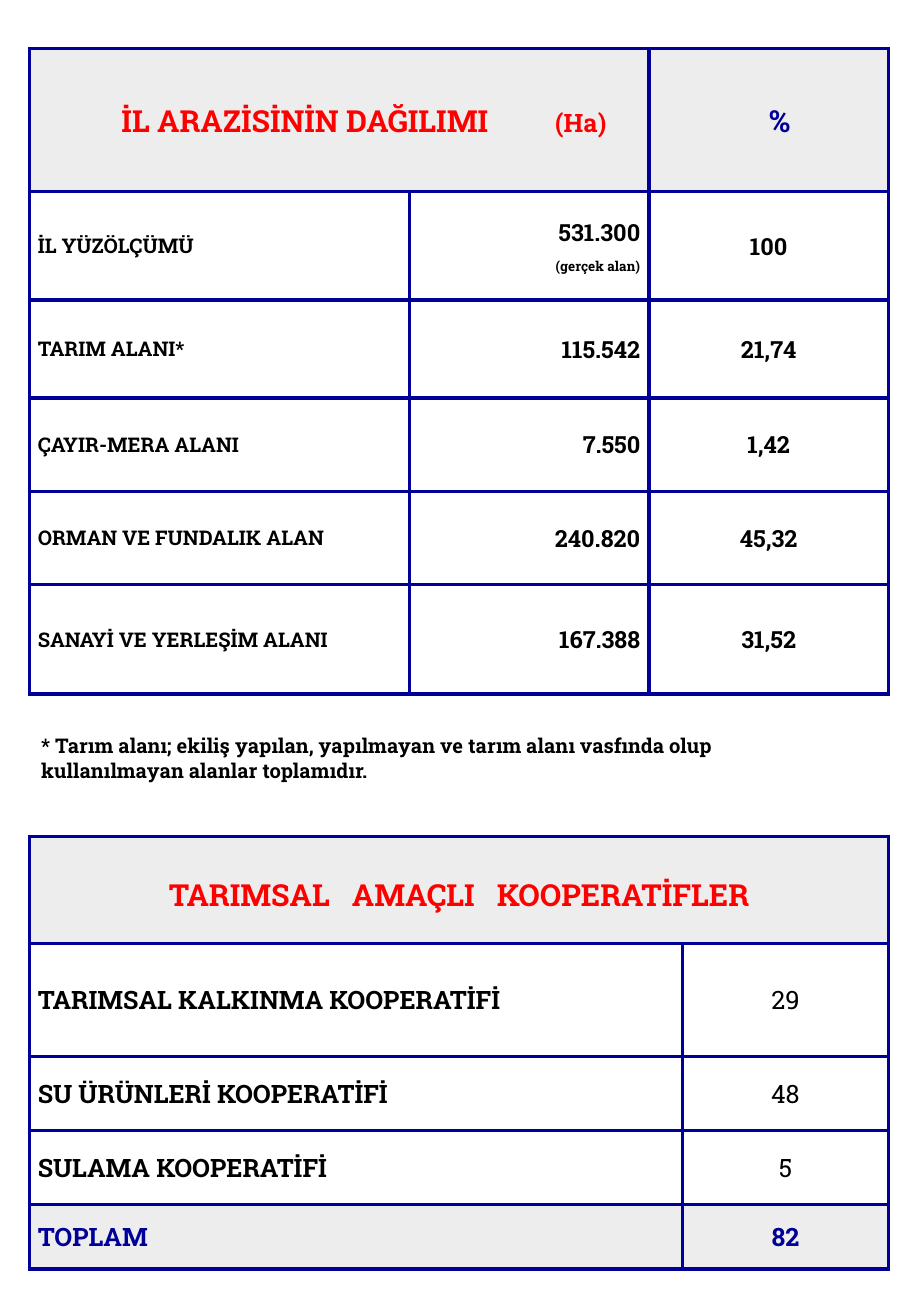
from lxml.etree import SubElement
from pptx import Presentation
from pptx.dml.color import RGBColor
from pptx.enum.text import MSO_ANCHOR as Anchor, PP_ALIGN as Align
from pptx.oxml import parse_xml
from pptx.oxml.ns import nsdecls, qn
from pptx.util import Cm, Pt

FONT = "Roboto Slab"
NAVY, RED, BLACK, GREY, WHITE = "000099", "FF0000", "000000", "EDEDED", "FFFFFF"
LEFT = 0.61

LAND = [
    ("İL YÜZÖLÇÜMÜ", "531.300", "100"),
    ("TARIM ALANI*", "115.542", "21,74"),
    ("ÇAYIR-MERA ALANI", "7.550", "1,42"),
    ("ORMAN VE FUNDALIK ALAN", "240.820", "45,32"),
    ("SANAYİ VE YERLEŞİM ALANI", "167.388", "31,52"),
]
LAND_COLS = [7.95, 5.01, 5.01]
LAND_ROWS = [2.99, 2.26, 2.05, 1.95, 1.95, 2.29]
FOOTNOTE = ("* Tarım alanı; ekiliş yapılan, yapılmayan ve tarım alanı vasfında "
            "olup kullanılmayan alanlar toplamıdır.")
COOPS = [
    ("TARIMSAL KALKINMA KOOPERATİFİ", "29"),
    ("SU ÜRÜNLERİ KOOPERATİFİ", "48"),
    ("SULAMA KOOPERATİFİ", "5"),
    ("TOPLAM", "82"),
]
COOP_COLS = [13.66, 4.31]
COOP_ROWS = [2.24, 2.36, 1.55, 1.55, 1.35]


def rgb(color):
    return RGBColor.from_string(color)


def add_text(p, text, size=12, color=BLACK, bold=True, align=Align.LEFT):
    p.alignment = align
    r = p.add_run()
    r.text = text
    f = r.font
    f.name, f.size, f.bold = FONT, Pt(size), bold
    f.color.rgb = rgb(color)


def set_tabs(p, *stops):
    tabs = SubElement(p._p.get_or_add_pPr(), qn("a:tabLst"))
    for stop in stops:
        SubElement(tabs, qn("a:tab"), pos=str(Cm(stop)), algn="l")


def add_grid(s, top, cols, rows):
    """Add an empty table with a navy grid and a grey first row."""
    table = s.shapes.add_table(len(rows), len(cols), Cm(LEFT), Cm(top),
                               Cm(sum(cols)), Cm(sum(rows))).table
    table.first_row = table.horz_banding = False
    for col, width in zip(table.columns, cols):
        col.width = Cm(width)
    for i, (row, height) in enumerate(zip(table.rows, rows)):
        row.height = Cm(height)
        for cell in row.cells:
            style_cell(cell, GREY if i == 0 else WHITE)
    table.cell(0, 0).merge(table.cell(0, 1))
    return table


def style_cell(cell, fill):
    cell.fill.solid()
    cell.fill.fore_color.rgb = rgb(fill)
    cell.vertical_anchor = Anchor.MIDDLE
    cell.margin_left = cell.margin_right = Cm(0.18)
    cell.margin_top = cell.margin_bottom = Cm(0.1)
    for i, side in enumerate(("lnL", "lnR", "lnT", "lnB")):
        cell._tc.get_or_add_tcPr().insert(i, parse_xml(
            f'<a:{side} {nsdecls("a")} w="{Pt(2.25)}"><a:solidFill>'
            f'<a:srgbClr val="{NAVY}"/></a:solidFill></a:{side}>'))


def add_land_table(s):
    table = add_grid(s, 1.02, LAND_COLS, LAND_ROWS)
    title, percent = table.cell(0, 0), table.cell(0, 2)
    title.margin_left = Cm(1.93)
    p = title.text_frame.paragraphs[0]
    set_tabs(p, 9.07)
    add_text(p, "İL ARAZİSİNİN DAĞILIMI\t", size=18, color=RED)
    add_text(p, "(Ha)", size=15, color=RED)
    percent.margin_left = Cm(0.64)
    add_text(percent.text_frame.paragraphs[0], "%", size=18, color=NAVY,
             align=Align.CENTER)
    formats = [(12, Align.LEFT), (14, Align.RIGHT), (14, Align.CENTER)]
    for i, values in enumerate(LAND, 1):
        for j, (value, (size, align)) in enumerate(zip(values, formats)):
            add_text(table.cell(i, j).text_frame.paragraphs[0], value,
                     size=size, align=align)
    p = table.cell(1, 1).text_frame.add_paragraph()
    p.space_before = Pt(6)
    add_text(p, "(gerçek alan)", size=8, align=Align.RIGHT)


def add_footnote(s):
    tf = s.shapes.add_textbox(Cm(LEFT), Cm(15.21), Cm(16.79), Cm(1.27)).text_frame
    tf.word_wrap = True
    add_text(tf.paragraphs[0], FOOTNOTE)


def add_coop_table(s):
    table = add_grid(s, 17.48, COOP_COLS, COOP_ROWS)
    title = table.cell(0, 0)
    title.vertical_anchor = Anchor.TOP
    title.margin_left, title.margin_top = Cm(2.92), Cm(0.8)
    p = title.text_frame.paragraphs[0]
    set_tabs(p, 3.83, 6.86)
    add_text(p, "TARIMSAL\tAMAÇLI\tKOOPERATİFLER", size=18, color=RED)
    for i, (name, count) in enumerate(COOPS, 1):
        total = i == len(COOPS)
        color = NAVY if total else BLACK
        label, number = table.cell(i, 0), table.cell(i, 1)
        add_text(label.text_frame.paragraphs[0], name, size=15, color=color)
        add_text(number.text_frame.paragraphs[0], count, size=15, color=color,
                 bold=total, align=Align.CENTER)
        if total:
            for cell in (label, number):
                cell.fill.fore_color.rgb = rgb(GREY)


def main():
    prs = Presentation()
    prs.slide_width, prs.slide_height = Cm(19.05), Cm(27.51)
    s = prs.slides.add_slide(prs.slide_layouts[6])
    add_land_table(s)
    add_footnote(s)
    add_coop_table(s)
    prs.save("out.pptx")


if __name__ == "__main__":
    main()
